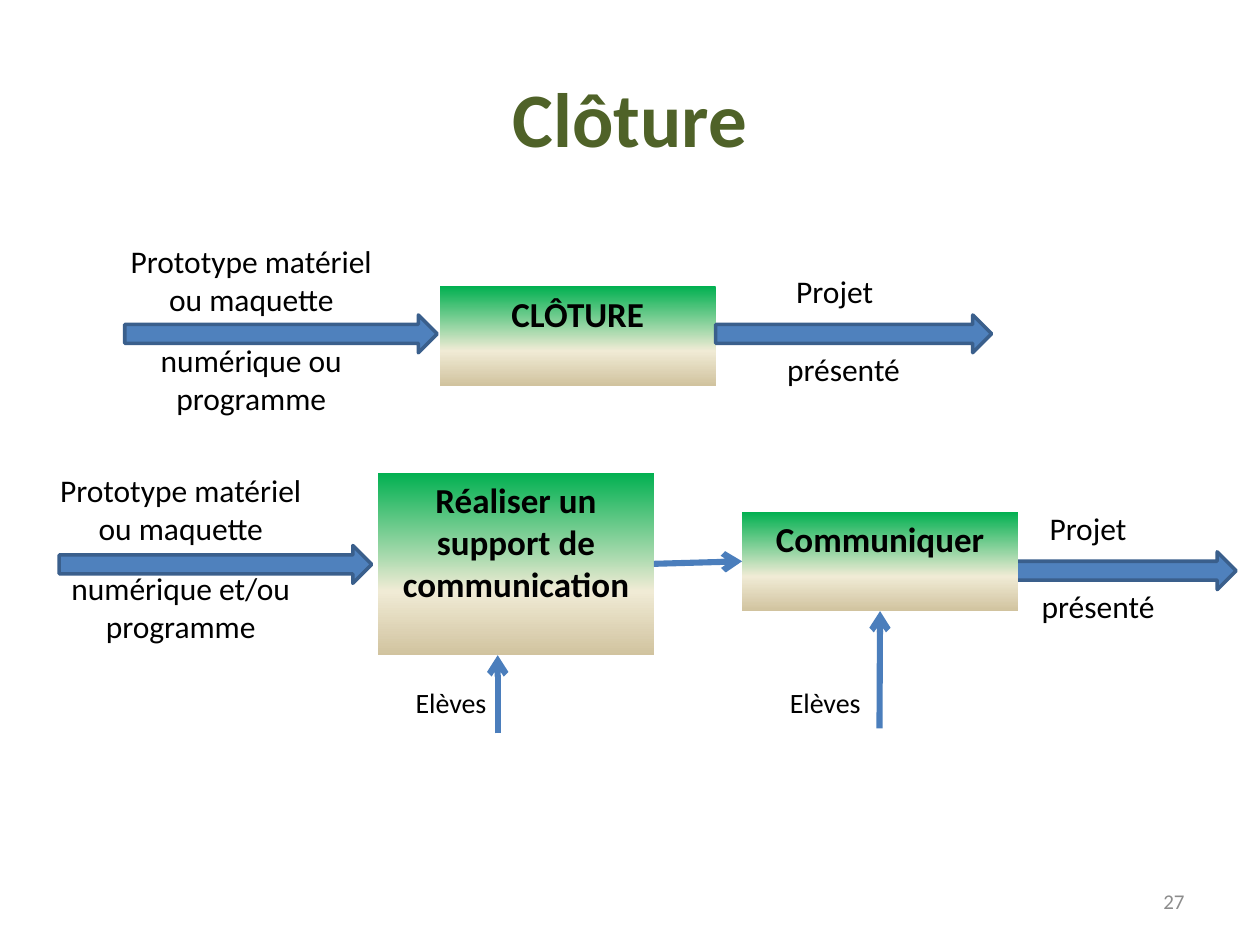
import copy
from dataclasses import dataclass

import pptx
import pptx.dml.color
import pptx.enum.dml
import pptx.enum.shapes
import pptx.enum.text
import pptx.util
from lxml import etree

CELL = 0.1  # inches: the slide is a grid of 100 columns by 75 rows
ALIGN = pptx.enum.text.PP_ALIGN
ANCHOR = pptx.enum.text.MSO_ANCHOR
SHAPE = pptx.enum.shapes.MSO_SHAPE


@dataclass(frozen=True)
class Theme:
    font: str = "Calibri"
    title: str = "4F6228"
    ink: str = "000000"
    grey: str = "8C8C8C"
    arrow: str = "4F81BD"
    edge: str = "3A5F8C"
    link: str = "4B7EBC"
    fade: tuple = ((0, "00B050"), (0.65, "F0EBD5"), (1, "D1C39F"))
    head: int = 44
    box: int = 20
    flow: int = 18
    actor: int = 16
    page: int = 12


@dataclass(frozen=True)
class Box:
    col: float
    row: float
    high: float
    text: str


@dataclass(frozen=True)
class Flow:
    """Block arrow with a label above and a label below."""
    col: float
    row: float
    wide: float
    shift: tuple  # label columns from the arrow's left end
    rise: tuple   # label rows from the arrow's top
    texts: tuple


THEME = Theme()
BOX_W, LABEL_W = 21.9, 31.3


def grid(n: float) -> pptx.util.Emu:
    return pptx.util.Inches(n * CELL)


def area(*cells: float) -> list:
    return [grid(n) for n in cells]


def rgb(code: str) -> pptx.dml.color.RGBColor:
    return pptx.dml.color.RGBColor.from_string(code)


def write(shape, text: str, size: int, color: str = THEME.ink,
          bold: bool = False, align=ALIGN.CENTER, anchor=ANCHOR.TOP) -> None:
    frame = shape.text_frame
    frame.text = text
    frame.word_wrap = True
    frame.vertical_anchor = anchor
    for para in frame.paragraphs:
        para.alignment = align
        font = para.font
        font.name, font.size, font.bold = THEME.font, pptx.util.Pt(size), bold
        font.color.rgb = rgb(color)


def label(slide, cells: tuple, text: str, size: int, **style):
    shape = slide.shapes.add_textbox(*area(*cells))
    write(shape, text, size, **style)


def draw_box(slide, box: Box):
    shape = slide.shapes.add_shape(
        SHAPE.RECTANGLE, *area(box.col, box.row, BOX_W, box.high))
    shape.shadow.inherit = False
    shape.line.fill.background()
    shape.fill.gradient()
    shape.fill.gradient_angle = 270
    # The default gradient has two stops: add a middle one
    first = shape._element.spPr.find(".//" + pptx.oxml.ns.qn("a:gs"))
    first.addnext(copy.deepcopy(first))
    for stop, (place, color) in zip(shape.fill.gradient_stops, THEME.fade):
        stop.position, stop.color.rgb = place, rgb(color)
    write(shape, box.text, THEME.box, bold=True)
    return shape


def draw_flow(slide, flow: Flow) -> None:
    shape = slide.shapes.add_shape(
        SHAPE.RIGHT_ARROW, *area(flow.col, flow.row, flow.wide, 3))
    shape.shadow.inherit = False
    shape.fill.solid()
    shape.fill.fore_color.rgb = rgb(THEME.arrow)
    shape.line.color.rgb = rgb(THEME.edge)
    shape.line.width = pptx.util.Pt(2)
    for dx, dy, text in zip(flow.shift, flow.rise, flow.texts):
        high = 3.1 * (text.count("\n") + 1) + 1
        label(slide, (flow.col + dx, flow.row + dy, LABEL_W, high),
              text, THEME.flow)


def draw_link(slide, start: tuple, end: tuple):
    line = slide.shapes.add_connector(
        pptx.enum.shapes.MSO_CONNECTOR.STRAIGHT, *area(*start, *end))
    line.line.color.rgb = rgb(THEME.link)
    line.line.width = pptx.util.Pt(3.5)
    qn = pptx.oxml.ns.qn
    etree.SubElement(line.line._get_or_add_ln(), qn("a:tailEnd"), type="arrow")
    etree.SubElement(line._element.spPr, qn("a:effectLst"))
    return line


def main() -> None:
    deck = pptx.Presentation()
    deck.slide_width, deck.slide_height = area(100, 75)
    slide = deck.slides.add_slide(deck.slide_layouts[5])

    # Title
    title = slide.shapes.title
    title.left, title.top, title.width, title.height = area(5, 3, 90, 12.5)
    write(title, "Clôture", THEME.head, THEME.title, True,
          anchor=ANCHOR.MIDDLE)

    # Overview: one step with its input and output
    draw_box(slide, Box(34.9, 22.7, 7.9, "CLÔTURE"))
    above, result = "Prototype matériel\nou maquette", ("Projet", "présenté")
    flows = (
        Flow(9.9, 25, 24.8, (-5.6, -5.6), (-6.3, 1.6),
             (above, "numérique ou\nprogramme")),
        Flow(56.8, 25, BOX_W, (-6.2, -5.5), (-3.9, 2.3), result),
        # Detail: input and output of the two steps
        Flow(4.7, 43.3, 24.8, (-6, -6), (-6.4, 1.4),
             (above, "numérique et/ou\nprogramme")),
        Flow(76.2, 43.8, BOX_W, (-5.5, -4.7), (-3.9, 2.3), result),
    )
    for flow in flows:
        draw_flow(slide, flow)

    # Detail: the two steps and their links
    make = draw_box(slide, Box(
        30, 37.5, 14.5, "Réaliser un\nsupport de\ncommunication"))
    tell = draw_box(slide, Box(58.9, 40.6, 7.9, "Communiquer"))
    link = draw_link(slide, (51.9, 44.6), (58.9, 44.6))
    link.begin_connect(make, 3)
    link.end_connect(tell, 1)
    draw_link(slide, (39.5, 58.2), (39.5, 52))
    draw_link(slide, (69.8, 57.8), (69.8, 48.5)).end_connect(tell, 2)
    for col in (26.8, 56.5):
        label(slide, (col, 53.9, 18, 3.7), "Elèves", THEME.actor)

    # Page number
    label(slide, (71.7, 69.5, 23.3, 4), "27", THEME.page, color=THEME.grey,
          align=ALIGN.RIGHT, anchor=ANCHOR.MIDDLE)
    deck.save("out.pptx")


if __name__ == "__main__":
    main()
